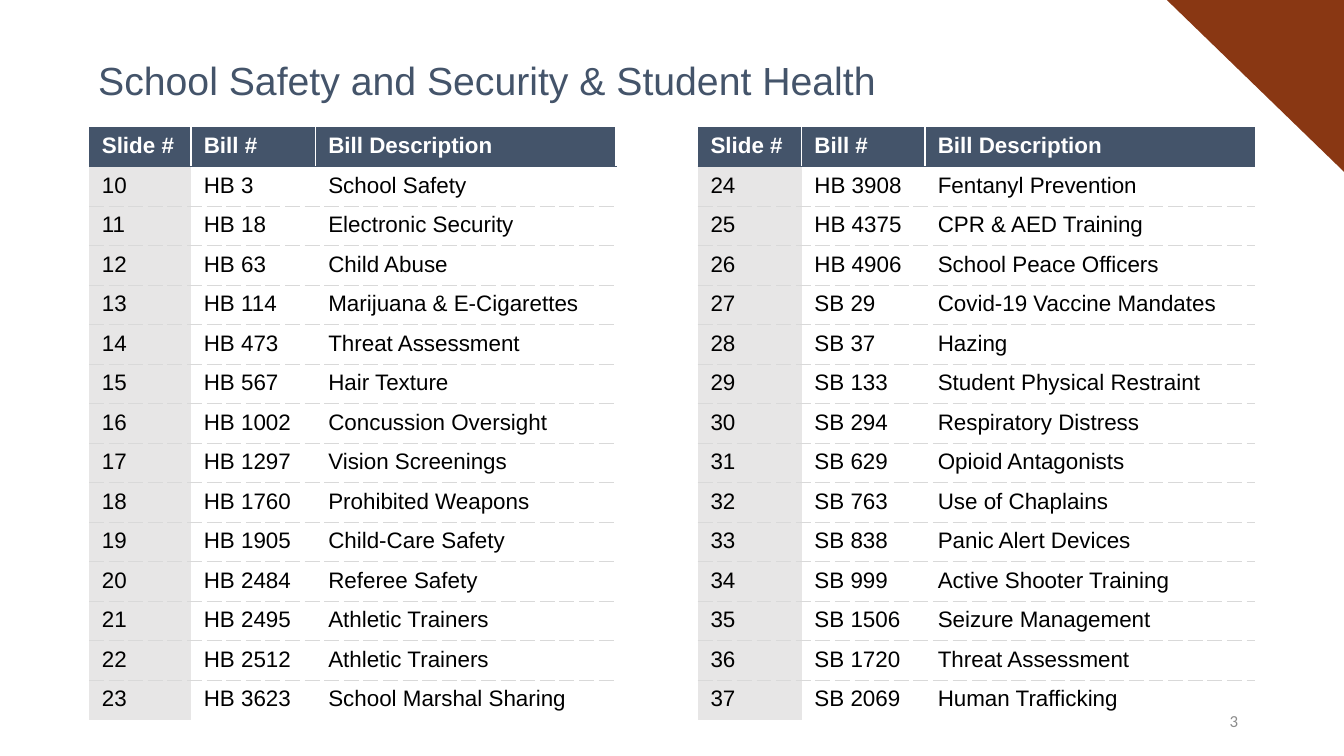
from lxml.etree import SubElement
from pptx import Presentation
from pptx.dml.color import RGBColor
from pptx.enum.shapes import MSO_SHAPE
from pptx.enum.text import MSO_ANCHOR, MSO_AUTO_SIZE, PP_ALIGN
from pptx.oxml.ns import qn
from pptx.util import Pt

NAVY = RGBColor(0x44, 0x54, 0x6A)
RUST = RGBColor(0x89, 0x37, 0x13)
PALE_GRAY = RGBColor(0xE7, 0xE6, 0xE6)
RULE_GRAY = RGBColor(0xD9, 0xD9, 0xD9)
NUMBER_GRAY = RGBColor(0x8C, 0x8C, 0x8C)
WHITE = RGBColor(0xFF, 0xFF, 0xFF)
BLACK = RGBColor(0, 0, 0)

PLAIN_TABLE_STYLE = "{2D5ABB26-0587-4C30-8999-92F81FD0307C}"
HEADINGS = ["Slide #", "Bill #", "Bill Description"]
COLUMN_WIDTHS = [54.6, 66.7, 160.9, 43.9, 55.7, 66.1, 176.6]
ROW_HEIGHT = 20.72
RIGHT_BLOCK = 4  # first column of the right-hand list

LEFT_BILLS = [
    ("HB 3", "School Safety"),
    ("HB 18", "Electronic Security"),
    ("HB 63", "Child Abuse"),
    ("HB 114", "Marijuana & E-Cigarettes"),
    ("HB 473", "Threat Assessment"),
    ("HB 567", "Hair Texture"),
    ("HB 1002", "Concussion Oversight"),
    ("HB 1297", "Vision Screenings"),
    ("HB 1760", "Prohibited Weapons"),
    ("HB 1905", "Child-Care Safety"),
    ("HB 2484", "Referee Safety"),
    ("HB 2495", "Athletic Trainers"),
    ("HB 2512", "Athletic Trainers"),
    ("HB 3623", "School Marshal Sharing"),
]
RIGHT_BILLS = [
    ("HB 3908", "Fentanyl Prevention"),
    ("HB 4375", "CPR & AED Training"),
    ("HB 4906", "School Peace Officers"),
    ("SB 29", "Covid-19 Vaccine Mandates"),
    ("SB 37", "Hazing"),
    ("SB 133", "Student Physical Restraint"),
    ("SB 294", "Respiratory Distress"),
    ("SB 629", "Opioid Antagonists"),
    ("SB 763", "Use of Chaplains"),
    ("SB 838", "Panic Alert Devices"),
    ("SB 999", "Active Shooter Training"),
    ("SB 1506", "Seizure Management"),
    ("SB 1720", "Threat Assessment"),
    ("SB 2069", "Human Trafficking"),
]


def style_text(text_frame, size, color, font_name="Arial", bold=False):
    for run in text_frame.paragraphs[0].runs:
        run.font.size = Pt(size)
        run.font.name = font_name
        run.font.bold = bold
        run.font.color.rgb = color


def add_border(cell, side, color, width, dash="solid"):
    line = SubElement(cell._tc.get_or_add_tcPr(), qn(f"a:ln{side}"), w=str(Pt(width)))
    SubElement(SubElement(line, qn("a:solidFill")), qn("a:srgbClr"), val=str(color))
    SubElement(line, qn("a:prstDash"), val=dash)


def fill_cell(cell, color=None):
    if color is None:
        cell.fill.background()
    else:
        cell.fill.solid()
        cell.fill.fore_color.rgb = color


def write_cell(cell, text, color, bold=False):
    cell.text_frame.text = text
    style_text(cell.text_frame, 12, color, bold=bold)


def add_title(slide, left, top, width, height):
    title = slide.shapes.title
    title.left, title.top, title.width, title.height = map(Pt, (left, top, width, height))
    frame = title.text_frame
    frame.text = "School Safety and Security & Student Health"
    frame.auto_size = MSO_AUTO_SIZE.NONE
    frame.vertical_anchor = MSO_ANCHOR.MIDDLE
    frame.paragraphs[0].alignment = PP_ALIGN.LEFT
    frame.paragraphs[0].line_spacing = 0.9
    style_text(frame, 21, NAVY)


def add_bill_list(table, first_column, first_slide, bills, last_ruled_row):
    # Header row
    for offset, heading in enumerate(HEADINGS):
        cell = table.cell(0, first_column + offset)
        write_cell(cell, heading, WHITE, bold=True)
        if offset > 0:
            add_border(cell, "L", WHITE, 1)
        if offset < len(HEADINGS) - 1:
            add_border(cell, "R", WHITE, 1)
        add_border(cell, "B", NAVY, 1)
        fill_cell(cell, NAVY)

    # One row per bill, with a dashed rule between rows
    for row, bill in enumerate(bills, start=1):
        values = (str(first_slide + row - 1), *bill)
        for offset, value in enumerate(values):
            cell = table.cell(row, first_column + offset)
            write_cell(cell, value, BLACK)
            if row == 1:
                add_border(cell, "T", NAVY, 1)
            elif row <= last_ruled_row + 1:
                add_border(cell, "T", RULE_GRAY, 0.5, "dash")
            if row <= last_ruled_row:
                add_border(cell, "B", RULE_GRAY, 0.5, "dash")
            fill_cell(cell, PALE_GRAY if offset == 0 else None)


def add_bill_table(slide, left, top, width, height):
    row_count = len(LEFT_BILLS) + 1
    table = slide.shapes.add_table(
        row_count, len(COLUMN_WIDTHS), Pt(left), Pt(top), Pt(width), Pt(height)
    ).table
    table.horz_banding = False
    table._tbl.tblPr.find(qn("a:tableStyleId")).text = PLAIN_TABLE_STYLE
    for column, column_width in zip(table.columns, COLUMN_WIDTHS):
        column.width = Pt(column_width)
    for row in table.rows:
        row.height = Pt(height / row_count)
        for cell in row.cells:
            cell.margin_left = cell.margin_right = Pt(6.9)
            cell.margin_top = cell.margin_bottom = Pt(3.4)

    add_bill_list(table, 0, 10, LEFT_BILLS, last_ruled_row=13)
    add_bill_list(table, RIGHT_BLOCK, 24, RIGHT_BILLS, last_ruled_row=12)

    # Empty column between the two lists
    for row in table.rows:
        gap = row.cells[RIGHT_BLOCK - 1]
        gap.text_frame.paragraphs[0].font.size = Pt(12)
        fill_cell(gap)


def add_corner(slide, left, top, width, height):
    corner = slide.shapes.add_shape(
        MSO_SHAPE.RIGHT_TRIANGLE, Pt(left), Pt(top), Pt(width), Pt(height)
    )
    corner.rotation = 180
    corner.shadow.inherit = False
    corner.fill.solid()
    corner.fill.fore_color.rgb = RUST
    corner.line.fill.background()


def add_slide_number(slide, left, top, width, height):
    frame = slide.shapes.add_textbox(Pt(left), Pt(top), Pt(width), Pt(height)).text_frame
    frame.word_wrap = True
    frame.vertical_anchor = MSO_ANCHOR.MIDDLE
    frame.text = "3"
    frame.paragraphs[0].alignment = PP_ALIGN.RIGHT
    style_text(frame, 9, NUMBER_GRAY, "Calibri")


def main():
    deck = Presentation()
    deck.slide_width, deck.slide_height = Pt(720), Pt(405)
    slide = deck.slides.add_slide(deck.slide_layouts[5])
    add_slide_number(slide, 508.3, 375.4, 162, 21.6)
    add_bill_table(slide, 47.7, 68, sum(COLUMN_WIDTHS), ROW_HEIGHT * 15)
    add_title(slide, 45.4, 21.6, 622, 46)
    add_corner(slide, 624.4, -0.7, 95.8, 92.9)
    deck.save("out.pptx")


if __name__ == "__main__":
    main()
